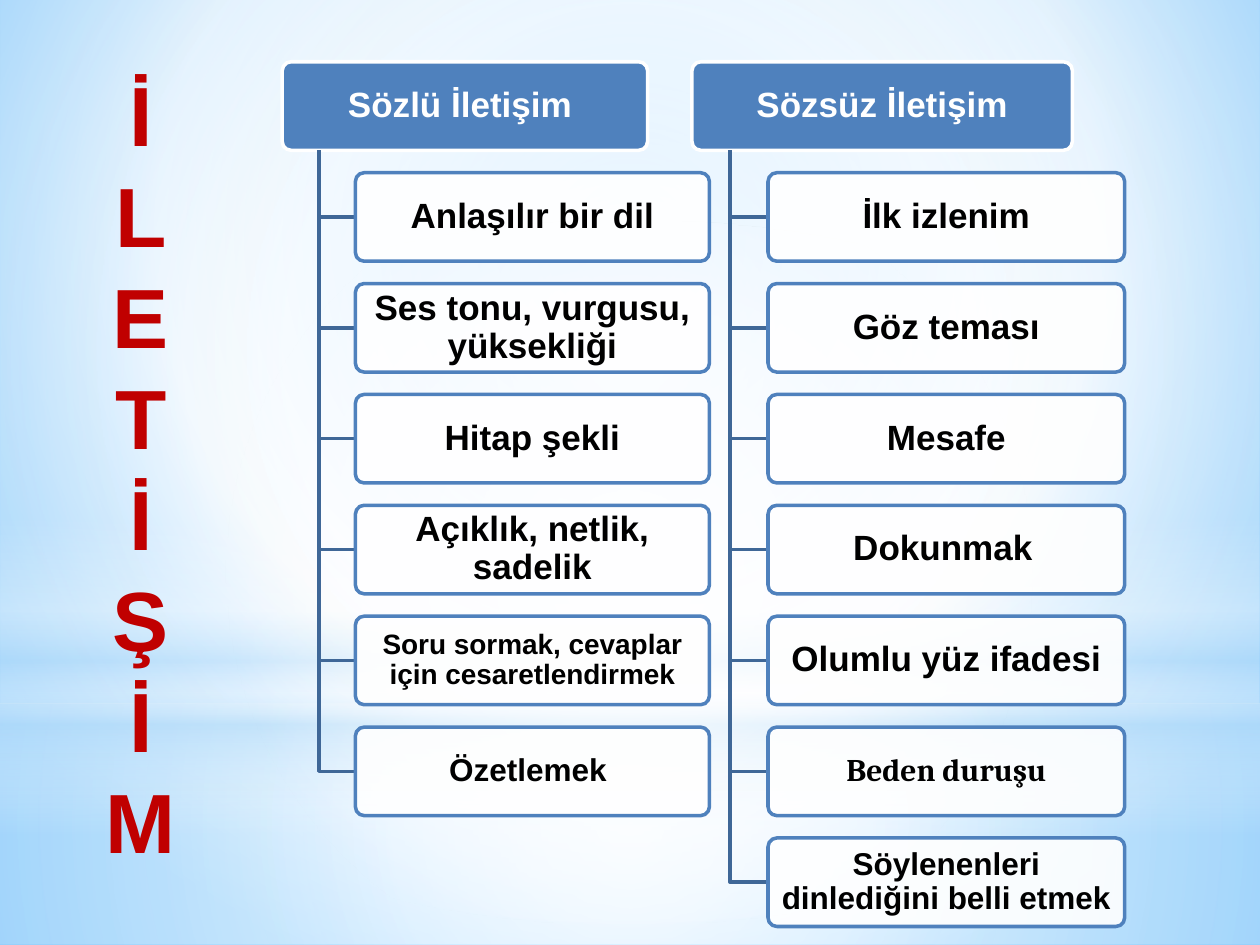
from dataclasses import dataclass
from typing import Optional

from lxml import etree
from pptx import Presentation
from pptx.dml.color import RGBColor
from pptx.enum import shapes, text
from pptx.oxml import ns
from pptx.util import Pt

TOP, PITCH, BOX_HEIGHT = 35.3, 63.36, 50.6
BLUE, SPINE_BLUE, WHITE, BLACK, RED = "4F81BD", "3F6797", "FFFFFF", "000000", "C00000"
PALE_BLUE = "B4DCFA"


@dataclass
class Gradient:
    stops: list
    focus: Optional[tuple] = None


@dataclass
class Backdrop:
    kind: int
    top: float
    height: float
    gradient: Gradient


@dataclass
class Item:
    wording: str
    size: float = 20
    font: str = "Arial"
    tail_font: str = ""


@dataclass
class Branch:
    heading: str
    left: float
    heading_width: float
    item_width: float
    items: list


def rgb(value: str) -> RGBColor:
    return RGBColor.from_string(value)


def apply_gradient(properties, gradient: Gradient) -> None:
    solid = properties.find(ns.qn("a:solidFill"))
    fill = etree.Element(ns.qn("a:gradFill"), rotWithShape="1")
    stops = etree.SubElement(fill, ns.qn("a:gsLst"))
    for position, color, opacity in gradient.stops:
        stop = etree.SubElement(stops, ns.qn("a:gs"), pos=str(position * 1000))
        swatch = etree.SubElement(stop, ns.qn("a:srgbClr"), val=color)
        etree.SubElement(swatch, ns.qn("a:alpha"), val=str(opacity * 1000))
    if gradient.focus:
        circle = etree.SubElement(fill, ns.qn("a:path"), path="circle")
        sides = {side: str(value * 1000) for side, value in zip("ltrb", gradient.focus)}
        etree.SubElement(circle, ns.qn("a:fillToRect"), **sides)
    else:
        etree.SubElement(fill, ns.qn("a:lin"), ang="5400000", scaled="0")
    properties.replace(solid, fill)


def draw_backdrop(slide, backdrop: Backdrop) -> None:
    panel = slide.shapes.add_shape(
        backdrop.kind, 0, Pt(backdrop.top), Pt(720), Pt(backdrop.height))
    panel.shadow.inherit = False
    panel.line.fill.background()
    panel.fill.solid()
    apply_gradient(panel.element.spPr, backdrop.gradient)


def add_run(paragraph, wording: str, size: float, font: str, color: str) -> None:
    run = paragraph.add_run()
    run.text = wording
    run.font.size = Pt(size)
    run.font.name = font
    run.font.bold = True
    run.font.color.rgb = rgb(color)


def draw_box(slide, item: Item, left: float, top: float, width: float,
             fill: str, outline: str, ink: str, opacity: int = 100) -> None:
    box = slide.shapes.add_shape(
        shapes.MSO_SHAPE.ROUNDED_RECTANGLE, Pt(left), Pt(top), Pt(width), Pt(BOX_HEIGHT))
    box.adjustments[0] = 0.1
    box.shadow.inherit = False
    box.fill.solid()
    box.fill.fore_color.rgb = rgb(fill)
    if opacity < 100:
        swatch = box.element.spPr.find(ns.qn("a:solidFill"))[0]
        etree.SubElement(swatch, ns.qn("a:alpha"), val=str(opacity * 1000))
    box.line.color.rgb = rgb(outline)
    box.line.width = Pt(2)
    frame = box.text_frame
    frame.word_wrap = True
    frame.vertical_anchor = text.MSO_ANCHOR.MIDDLE
    frame.margin_left = frame.margin_right = Pt(2.8)
    frame.margin_top = frame.margin_bottom = Pt(2)
    paragraph = frame.paragraphs[0]
    paragraph.alignment = text.PP_ALIGN.CENTER
    paragraph.line_spacing = 0.9
    add_run(paragraph, item.wording, item.size, item.font, ink)
    if item.tail_font:
        add_run(paragraph, " ", 18, item.tail_font, ink)


def draw_elbow(slide, spine: float, item_left: float, middle: float) -> None:
    builder = slide.shapes.build_freeform(Pt(spine), Pt(TOP + BOX_HEIGHT))
    builder.add_line_segments(
        [(Pt(spine), Pt(middle)), (Pt(item_left), Pt(middle))], close=False)
    elbow = builder.convert_to_shape()
    elbow.shadow.inherit = False
    elbow.fill.background()
    elbow.line.color.rgb = rgb(SPINE_BLUE)
    elbow.line.width = Pt(2)


def draw_branch(slide, branch: Branch) -> None:
    draw_box(slide, Item(branch.heading), branch.left, TOP, branch.heading_width,
             BLUE, WHITE, WHITE)
    spine = branch.left + branch.heading_width * 0.1
    item_left = branch.left + branch.heading_width * 0.2
    for row, item in enumerate(branch.items, start=1):
        top = TOP + row * PITCH
        draw_elbow(slide, spine, item_left, top + BOX_HEIGHT / 2)
        draw_box(slide, item, item_left, top, branch.item_width, WHITE, BLUE, BLACK, 90)


def write_title(slide, syllables: list) -> None:
    title = slide.shapes.title
    title.left, title.top, title.width, title.height = Pt(57.5), Pt(35.4), Pt(46), Pt(462)
    title.element.getparent().append(title.element)
    frame = title.text_frame
    frame.word_wrap = True
    frame.auto_size = text.MSO_AUTO_SIZE.NONE
    frame.vertical_anchor = text.MSO_ANCHOR.TOP
    frame.margin_left = frame.margin_right = frame.margin_top = frame.margin_bottom = 0
    for index, syllable in enumerate(syllables):
        paragraph = frame.add_paragraph() if index else frame.paragraphs[0]
        paragraph.alignment = text.PP_ALIGN.CENTER
        paragraph.line_spacing = Pt(57.7)
        add_run(paragraph, syllable, 48, "Arial", RED)


CENTER = (50, 50, 50, 50)
SKY = Gradient([(0, "9ED5FF", 100), (60, WHITE, 100), (100, "5BB9FF", 100)], (20, 10, 20, 60))
BACKDROPS = [
    Backdrop(shapes.MSO_SHAPE.RECTANGLE, 401.8, 138.2, Gradient(
        [(0, WHITE, 91), (37, WHITE, 76), (100, PALE_BLUE, 79)], CENTER)),
    Backdrop(shapes.MSO_SHAPE.RECTANGLE, 0, 401.8, Gradient(
        [(0, WHITE, 89), (48, WHITE, 62), (100, PALE_BLUE, 79)], CENTER)),
    Backdrop(shapes.MSO_SHAPE.RECTANGLE, 296.6, 180, Gradient(
        [(0, WHITE, 0), (29, WHITE, 30), (45, PALE_BLUE, 40),
         (55, WHITE, 26), (65, PALE_BLUE, 60), (100, WHITE, 0)])),
    Backdrop(shapes.MSO_SHAPE.OVAL, 126, 401.8, Gradient(
        [(0, WHITE, 100), (56, WHITE, 0)], CENTER)),
]
BRANCHES = [
    Branch("Sözlü İletişim ", 161.3, 208.8, 202.3, [
        Item("Anlaşılır bir dil"),
        Item("Ses tonu, vurgusu, yüksekliği"),
        Item("Hitap şekli"),
        Item("Açıklık, netlik, sadelik"),
        Item("Soru sormak, cevaplar için cesaretlendirmek", 16),
        Item("Özetlemek ", 18),
    ]),
    Branch("Sözsüz İletişim", 395.4, 217.4, 203.8, [
        Item("İlk izlenim"),
        Item("Göz teması"),
        Item("Mesafe"),
        Item("Dokunmak", tail_font="Cambria"),
        Item("Olumlu yüz ifadesi"),
        Item("Beden duruşu", 18, "Cambria"),
        Item("Söylenenleri dinlediğini belli etmek", 18),
    ]),
]


def main() -> None:
    deck = Presentation()
    deck.slide_width, deck.slide_height = Pt(720), Pt(540)
    slide = deck.slides.add_slide(deck.slide_layouts[5])
    slide.background.fill.solid()
    apply_gradient(slide.element.find(".//" + ns.qn("p:bgPr")), SKY)
    for backdrop in BACKDROPS:
        draw_backdrop(slide, backdrop)
    for branch in BRANCHES:
        draw_branch(slide, branch)
    write_title(slide, ["İ", "LET", "İ", "Ş", "İ", "M"])
    deck.save("out.pptx")


if __name__ == "__main__":
    main()
